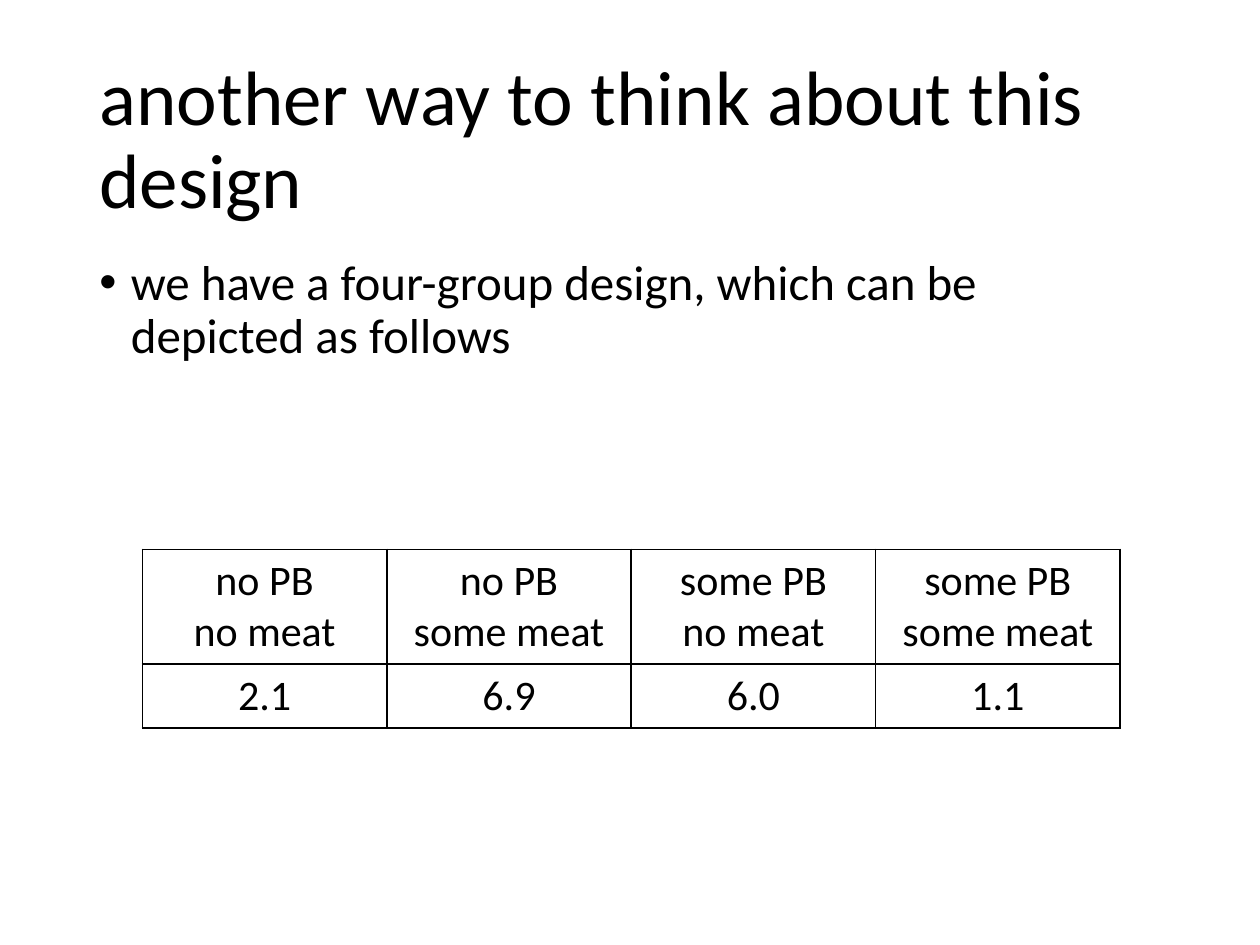
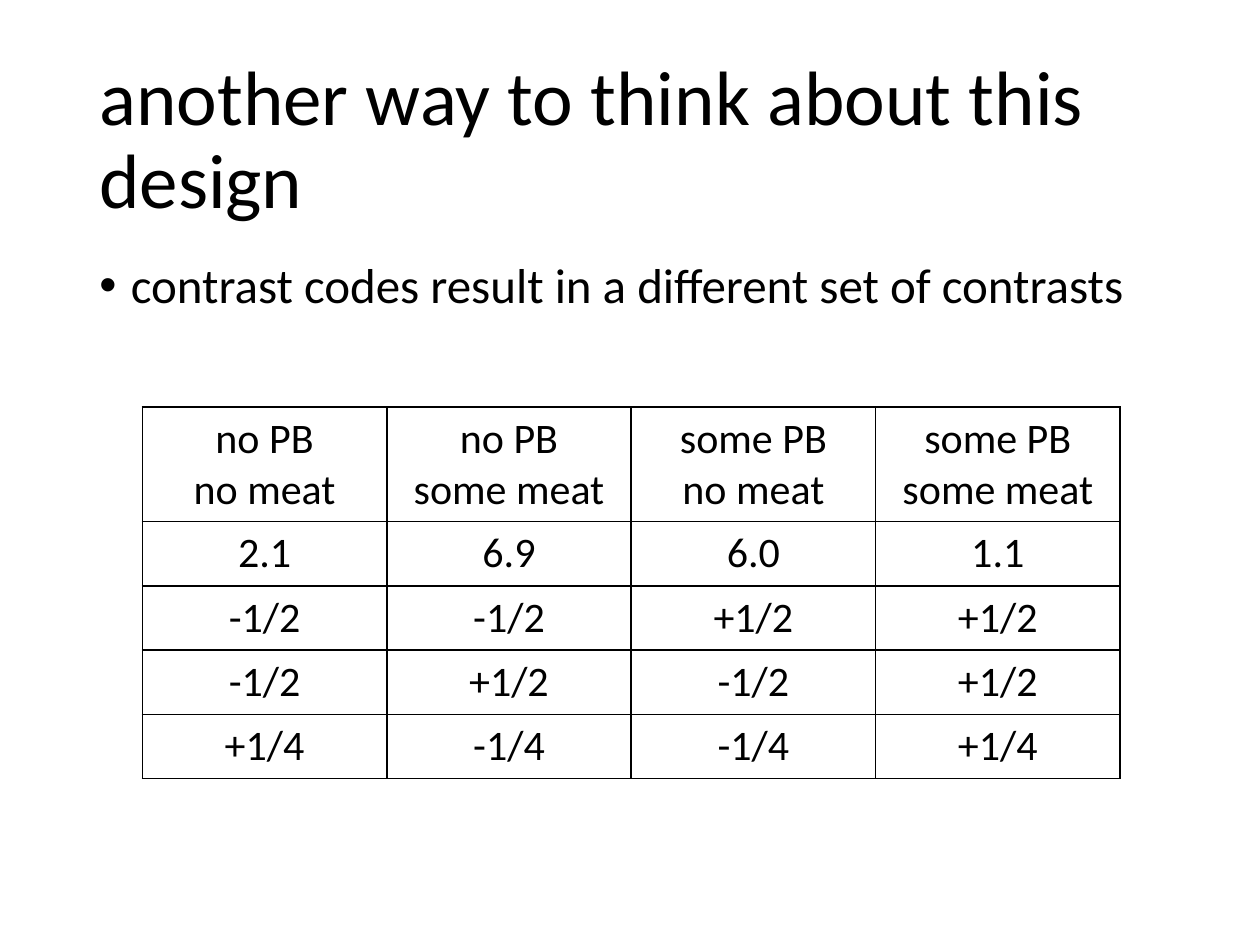
from lxml import etree
from pptx import Presentation
from pptx import util as u
from pptx.dml.color import RGBColor
from pptx.enum import text
from pptx.oxml.ns import qn

BLACK = RGBColor(0x00, 0x00, 0x00)
FONT = {"name": "Calibri"}
TITLE = "another way to think about this design"
TITLE_PLACE = (0.69, 0.4, 8.62, 1.45)
TABLE_LEFT, COLUMN_WIDTH = 1.13, 1.94
HEADER_HEIGHT, ROW_HEIGHT = 0.91, 0.51

GROUPS = ["no PB\nno meat", "no PB\nsome meat", "some PB\nno meat", "some PB\nsome meat"]
MEANS = ["2.1", "6.9", "6.0", "1.1"]
CONTRASTS = [
    ["-1/2", "-1/2", "+1/2", "+1/2"],
    ["-1/2", "+1/2", "-1/2", "+1/2"],
    ["+1/4", "-1/4", "-1/4", "+1/4"],
]

# Each slide: bullet text, bullet top and height, table top, table rows
SLIDES = [
    ("we have a four-group design, which can be depicted as follows",
     2, 1.37, 4.36, [GROUPS, MEANS]),
    ("contrast codes result in a different set of contrasts",
     2.02, 1.04, 3.23, [GROUPS, MEANS, *CONTRASTS]),
]


def style_paragraph(para, size, **layout):
    for key, value in {**FONT, "size": u.Pt(size)}.items():
        setattr(para.font, key, value)
    para.font.color.rgb = BLACK
    for key, value in layout.items():
        setattr(para, key, value)


def add_text(page, words, place, size, anchor, **layout):
    box = page.shapes.add_textbox(*map(u.Inches, place))
    box.text_frame.word_wrap = True
    box.text_frame.vertical_anchor = anchor
    para = box.text_frame.paragraphs[0]
    para.text = words
    style_paragraph(para, size, line_spacing=0.9, **layout)
    return para


deck = Presentation()
deck.slide_width, deck.slide_height = u.Inches(10), u.Inches(7.5)

for bullet, bullet_top, bullet_height, table_top, rows in SLIDES:
    page = deck.slides.add_slide(deck.slide_layouts[6])

    # Title
    add_text(page, TITLE, TITLE_PLACE, 44, text.MSO_ANCHOR.MIDDLE)

    # Bullet with a hanging indent
    para = add_text(page, bullet, (0.69, bullet_top, 8.62, bullet_height), 28,
                    text.MSO_ANCHOR.TOP, space_before=u.Pt(10))
    properties = para._p.get_or_add_pPr()
    properties.set("marL", str(u.Inches(0.25)))
    properties.set("indent", str(u.Inches(-0.25)))
    mark_font = etree.Element(qn("a:buFont"), typeface="Arial")
    mark = etree.Element(qn("a:buChar"), char="•")
    properties.find(qn("a:defRPr")).addprevious(mark_font)
    mark_font.addnext(mark)

    # Table of groups
    heights = [HEADER_HEIGHT] + [ROW_HEIGHT] * (len(rows) - 1)
    place = (TABLE_LEFT, table_top, COLUMN_WIDTH * len(GROUPS), sum(heights))
    table = page.shapes.add_table(len(rows), len(GROUPS), *map(u.Inches, place)).table
    table.first_row = table.horz_banding = False
    for column in table.columns:
        column.width = u.Inches(COLUMN_WIDTH)
    for row, height, values in zip(table.rows, heights, rows):
        row.height = u.Inches(height)
        for cell, value in zip(row.cells, values):
            cell.text = value
            for para in cell.text_frame.paragraphs:
                style_paragraph(para, 24, alignment=text.PP_ALIGN.CENTER)

            # Thin black borders, no fill
            cell_properties = cell._tc.get_or_add_tcPr()
            for side in ("a:lnL", "a:lnR", "a:lnT", "a:lnB"):
                line = etree.SubElement(cell_properties, qn(side), w=str(u.Pt(1)))
                fill = etree.SubElement(line, qn("a:solidFill"))
                etree.SubElement(fill, qn("a:srgbClr"), val=str(BLACK))
            cell.fill.background()

deck.save("out.pptx")
